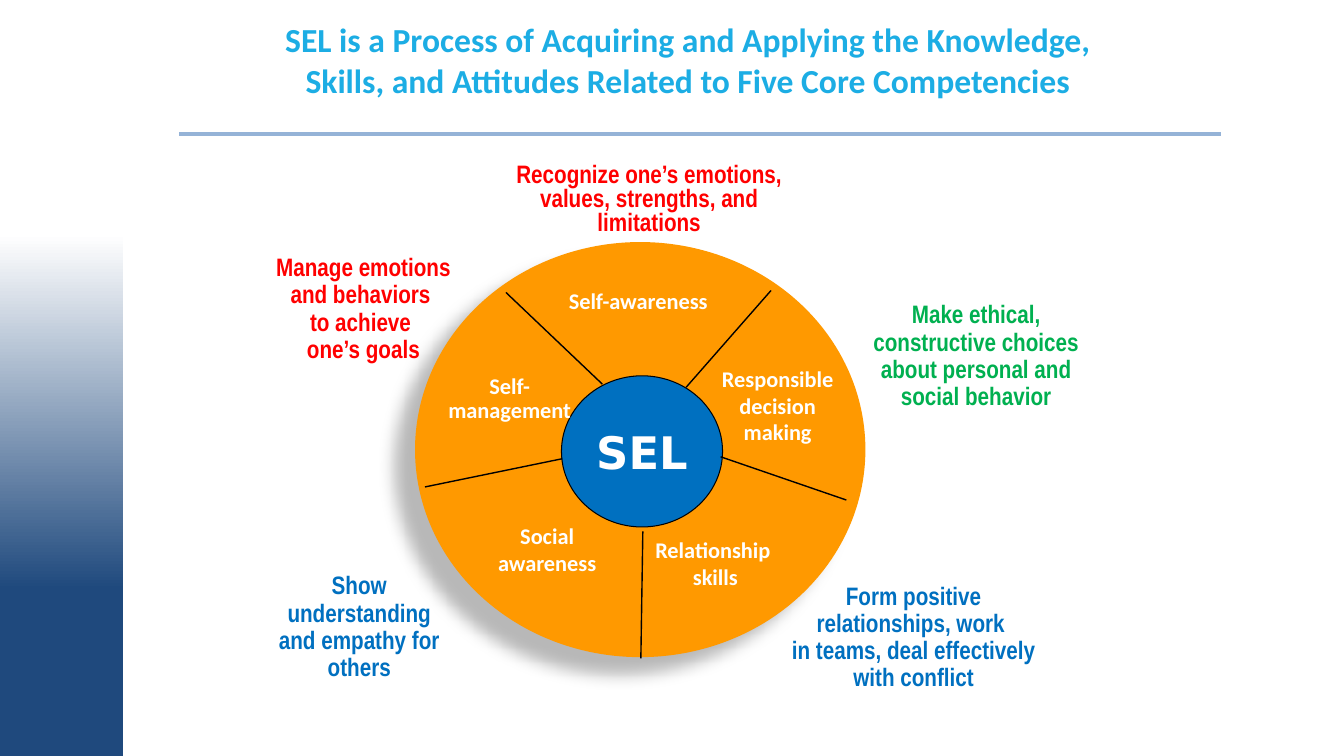
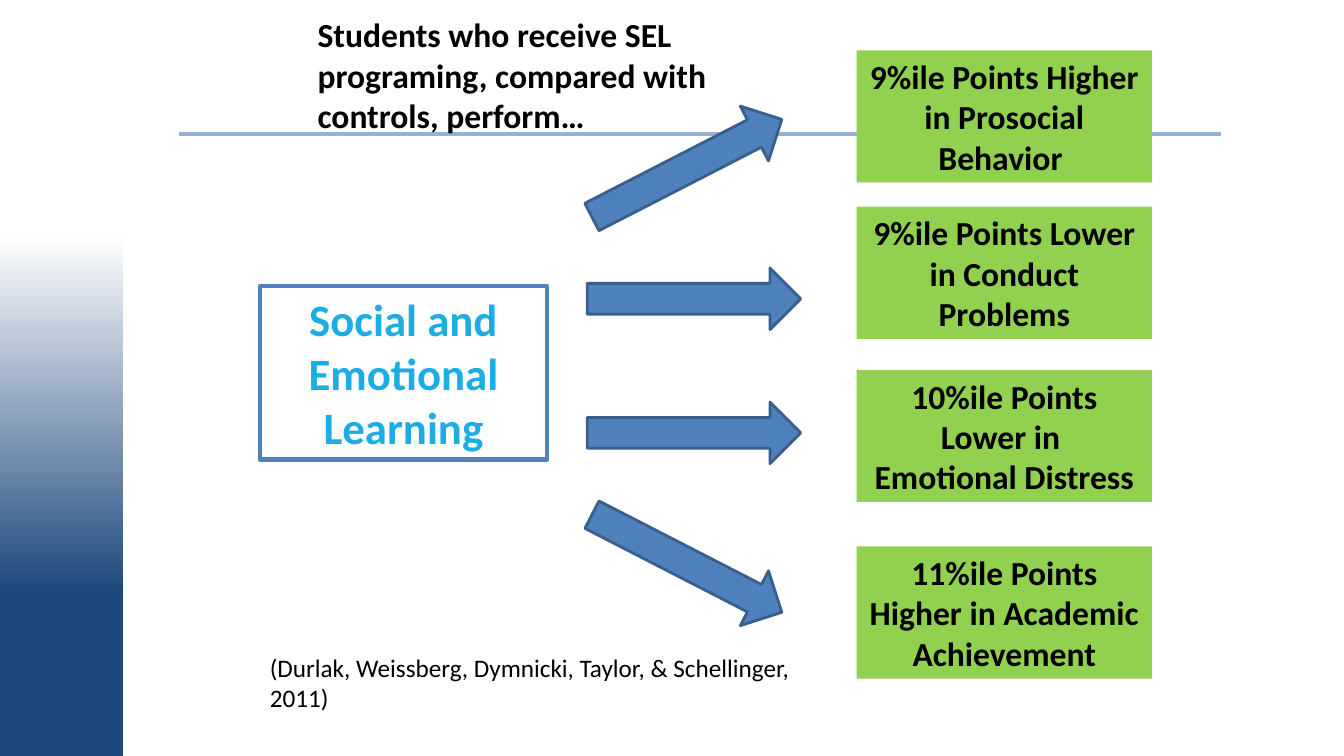
import pptx
import pptx.dml.color
import pptx.enum.shapes
import pptx.enum.text
import pptx.oxml
import pptx.oxml.ns
import pptx.util
from lxml import etree

Cm = pptx.util.Cm
Pt = pptx.util.Pt
SHAPE = pptx.enum.shapes.MSO_SHAPE
CENTER = pptx.enum.text.PP_ALIGN.CENTER
LEFT = pptx.enum.text.PP_ALIGN.LEFT
TOP = pptx.enum.text.MSO_ANCHOR.TOP
MIDDLE = pptx.enum.text.MSO_ANCHOR.MIDDLE

SLIDE_WIDTH, SLIDE_HEIGHT = 33.87, 19.05
TITLE_ONLY = 5

NAVY, RULE_BLUE, SKY = "1F497D", "95B3D7", "1CADE4"
BLUE, ARROW_BLUE, ARROW_EDGE = "0070C0", "4F81BD", "3A5F8C"
ORANGE, LIME, GREEN, RED = "FF9900", "92D050", "00B050", "FF0000"
WHITE, BLACK = "FFFFFF", "000000"


def rgb(value):
    return pptx.dml.color.RGBColor.from_string(value)


def write(shape, text, size, color, font="Calibri", bold=True,
          align=CENTER, anchor=TOP, spacing=None, wrap=True):
    frame = shape.text_frame
    frame.text = text
    frame.word_wrap = wrap
    frame.auto_size = pptx.enum.text.MSO_AUTO_SIZE.NONE
    frame.vertical_anchor = anchor
    for paragraph in frame.paragraphs:
        paragraph.alignment = align
        paragraph.line_spacing = spacing
        paragraph.font.name = font
        paragraph.font.size = Pt(size)
        paragraph.font.bold = bold
        paragraph.font.color.rgb = rgb(color)


def add_text(slide, left, top, width, height, text, size, color, **style):
    box = slide.shapes.add_textbox(Cm(left), Cm(top), Cm(width), Cm(height))
    write(box, text, size, color, **style)


def add_shape(slide, kind, left, top, width, height, fill=None, line=None, line_width=1):
    shape = slide.shapes.add_shape(kind, Cm(left), Cm(top), Cm(width), Cm(height))
    shape.shadow.inherit = False
    if fill:
        shape.fill.solid()
        shape.fill.fore_color.rgb = rgb(fill)
    if line:
        shape.line.color.rgb = rgb(line)
        shape.line.width = Pt(line_width)
    else:
        shape.line.fill.background()
    return shape


def add_line(slide, x1, y1, x2, y2, color, width):
    line = slide.shapes.add_connector(
        pptx.enum.shapes.MSO_CONNECTOR.STRAIGHT, Cm(x1), Cm(y1), Cm(x2), Cm(y2))
    line.line.color.rgb = rgb(color)
    line.line.width = Pt(width)
    etree.SubElement(line.element.spPr, pptx.oxml.ns.qn("a:effectLst"))
    return line


def add_soft_shadow(shape, blur, distance, degrees, opacity):
    effects = shape.element.spPr.find(pptx.oxml.ns.qn("a:effectLst"))
    effects.append(pptx.oxml.parse_xml(
        f'<a:outerShdw {pptx.oxml.ns.nsdecls("a")} blurRad="{Pt(blur)}" '
        f'dist="{Pt(distance)}" dir="{degrees * 60000}" algn="ctr" rotWithShape="0">'
        f'<a:srgbClr val="{BLACK}"><a:alpha val="{opacity * 1000}"/></a:srgbClr>'
        '</a:outerShdw>'))


def decorate_layout(layout, slide):
    """Draw the side band and title rule on a slide, then move them to its layout."""
    band = add_shape(slide, SHAPE.RECTANGLE, 0, 0, 3.1, SLIDE_HEIGHT)
    band.fill.gradient()
    band.fill.gradient_angle = 90
    for stop, position, color in zip(band.fill.gradient_stops, (0.22, 0.69), (NAVY, WHITE)):
        stop.position = position
        stop.color.rgb = rgb(color)
    rule = add_line(slide, 4.52, 3.38, 30.76, 3.38, RULE_BLUE, 3)
    for shape in (band, rule):
        layout.shapes.element.append(shape.element)


def set_title(slide, left, top, width, height, text, color, align=CENTER):
    title = slide.shapes.title
    title.left, title.top = Cm(left), Cm(top)
    title.width, title.height = Cm(width), Cm(height)
    write(title, text, 24, color, align=align)


def add_wheel(slide, left, top, width, height):
    rim = add_shape(slide, SHAPE.OVAL, left, top, width, height, ORANGE)
    add_soft_shadow(rim, 11.8, 19.7, 141, 28)
    hub = add_shape(slide, SHAPE.OVAL, left + 3.69, top + 3.37, 4.06, 3.81, BLUE, BLACK, 0.75)
    write(hub, "SEL", 32, WHITE, font="DejaVu Sans", anchor=MIDDLE, wrap=False)

    competencies = [
        (3.43, 1.02, 4.39, 0.94, "Self-awareness", None),
        (1.5, 6.93, 3.66, 1.63, "Social awareness", None),
        (5.54, 7.29, 4.06, 1.63, "Relationship \nskills", None),
        (7.21, 2.97, 3.86, 2.31, "Responsible decision making", None),
        (0.15, 3.23, 4.47, 0.86, "Self-management", 0.9),
    ]
    for x, y, label_width, label_height, text, spacing in competencies:
        add_text(slide, left + x, top + y, label_width, label_height,
                 text, 16, WHITE, spacing=spacing)

    spokes = [
        (7.7, 5.41, 10.87, 6.5),
        (3.71, 5.46, 0.25, 6.17),
        (6.83, 3.66, 8.97, 1.22),
        (2.29, 1.27, 4.72, 3.58),
        (5.74, 7.29, 5.69, 10.49),
    ]
    for x1, y1, x2, y2 in spokes:
        add_line(slide, left + x1, top + y1, left + x2, top + y2, BLACK, 1)


def add_callouts(slide, left, top):
    callouts = [
        (13.13, 10.57, 7.19, BLUE, 0.9,
         "Form positive\vrelationships, work \vin teams, deal effectively with conflict"),
        (15.34, 3.48, 5.92, GREEN, 0.9,
         "Make ethical, constructive choices about personal and social behavior"),
        (0, 2.29, 5.72, RED, 0.9,
         "Manage emotions and behaviors \vto achieve \vone’s goals"),
        (0.43, 10.31, 4.65, BLUE, 0.9, "Show understanding and empathy for others"),
        (6.4, 0, 7.32, RED, 0.8,
         "Recognize one’s emotions, values, strengths, and limitations"),
    ]
    for x, y, width, color, spacing, text in callouts:
        add_text(slide, left + x, top + y, width, 3.02, text, 18, color,
                 font="Arial Narrow", spacing=spacing)


def add_cause(slide, left, top, width, height):
    cause = add_shape(slide, SHAPE.RECTANGLE, left, top, width, height, WHITE, ARROW_BLUE, 3)
    write(cause, "Social and Emotional Learning", 32, SKY, anchor=MIDDLE)


def add_arrows(slide, center, middle):
    """Fan four arrows out symmetrically around the given centre point."""
    length, thickness = 5.38, 1.55
    for x, y, angle in [(-0.09, -4.98, -27.2), (0.09, -1.69, 0),
                        (0.09, 1.69, 0), (-0.09, 4.98, 27.2)]:
        arrow = add_shape(slide, SHAPE.RIGHT_ARROW, center + x - length / 2,
                          middle + y - thickness / 2, length, thickness,
                          ARROW_BLUE, ARROW_EDGE, 2)
        arrow.rotation = angle


def add_outcomes(slide, left, top, width):
    outcomes = [
        (0, "9%ile Points Higher in Prosocial Behavior "),
        (3.94, "9%ile Points Lower in Conduct Problems"),
        (8.05, "10%ile Points Lower in \nEmotional Distress"),
        (12.5, "11%ile Points Higher in Academic Achievement"),
    ]
    for y, text in outcomes:
        outcome = add_shape(slide, SHAPE.RECTANGLE, left, top + y, width, 3.33, LIME)
        write(outcome, text, 24, BLACK, anchor=MIDDLE)


def build_competencies(slide):
    set_title(slide, 6.3, 0.36, 22.07, 3.38,
              "SEL is a Process of Acquiring and Applying the Knowledge, "
              "Skills, and Attitudes Related to Five Core Competencies", SKY)
    add_wheel(slide, 10.46, 6.1, 11.35, 10.46)
    add_callouts(slide, 6.3, 4.01)


def build_results(slide):
    set_title(slide, 7.75, 0.23, 10.59, 3.33,
              "Students who receive SEL programing, compared with controls, perform…",
              BLACK, LEFT)
    add_outcomes(slide, 21.59, 1.27, 7.44)
    add_cause(slide, 6.55, 7.21, 7.24, 4.37)
    add_arrows(slide, 17.4, 9.22)
    add_text(slide, 6.55, 16.31, 13.97, 1.8,
             "(Durlak, Weissberg, Dymnicki, Taylor, & Schellinger, 2011)",
             18, BLACK, bold=False, align=LEFT)


def main():
    presentation = pptx.Presentation()
    presentation.slide_width = Cm(SLIDE_WIDTH)
    presentation.slide_height = Cm(SLIDE_HEIGHT)
    layout = presentation.slide_layouts[TITLE_ONLY]
    competencies = presentation.slides.add_slide(layout)
    results = presentation.slides.add_slide(layout)
    decorate_layout(layout, competencies)
    build_competencies(competencies)
    build_results(results)
    presentation.save("out.pptx")


if __name__ == "__main__":
    main()
